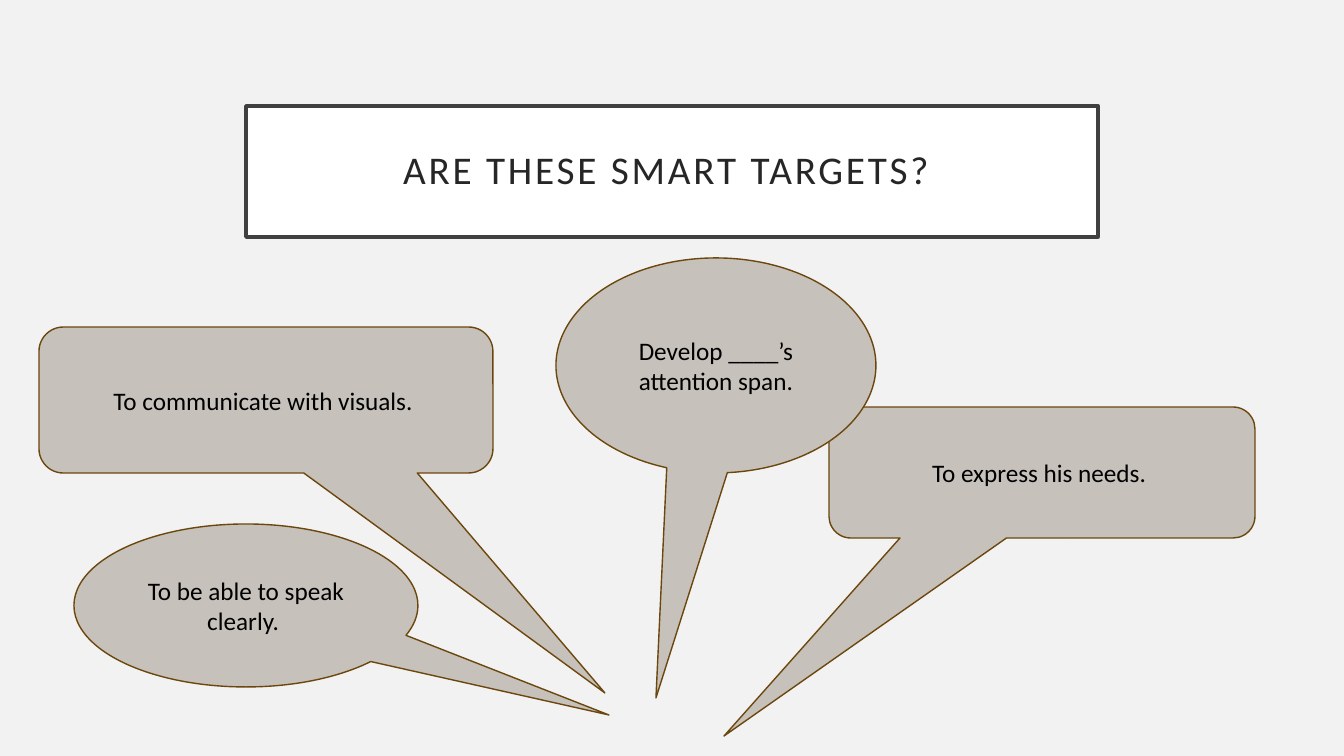
from dataclasses import dataclass

from pptx import Presentation
from pptx import util as u
from pptx.dml.color import RGBColor
from pptx.enum import shapes, text

# Content: lengths in px
SLIDE = (1344, 756)
HEADING = "ARE THESE SMART TARGETS? "
HEADING_BOX = (246, 106, 852, 131)
HEADING_INSET = 20

ROUNDED = shapes.MSO_SHAPE.ROUNDED_RECTANGULAR_CALLOUT
OVAL = shapes.MSO_SHAPE.OVAL_CALLOUT
# (wording, outline, (left, top, width, height), tip of the tail), back to front
TARGETS = [
    ("To communicate with visuals. ", ROUNDED, (39, 327, 454, 146), (605, 693)),
    ("To express his needs. ", ROUNDED, (829, 407, 426, 131), (724, 736)),
    ("Develop ____’s attention span.", OVAL, (556, 258, 320, 215), (656, 698)),
    ("To be able to speak clearly. ", OVAL, (74, 524, 344, 163), (609, 715)),
]


@dataclass(frozen=True)
class Theme:
    font: str = "Calibri"
    backdrop: str = "F2F2F2"
    heading_fill: str = "FFFFFF"
    heading_line: str = "404040"
    heading_text: str = "262626"
    bubble_fill: str = "C6C1BA"
    bubble_line: str = "6C470D"
    bubble_text: str = "000000"
    heading_size: int = 28
    bubble_size: int = 18


THEME = Theme()
PX = u.Inches(1) / 100.8


def px(*lengths):
    return [round(length * PX) for length in lengths]


def paint(part, fill, line, weight):
    part.fill.solid()
    part.fill.fore_color.rgb = RGBColor.from_string(fill)
    part.line.color.rgb = RGBColor.from_string(line)
    part.line.width = u.Pt(weight)


def write(part, wording, size, color):
    frame = part.text_frame
    frame.text = wording
    frame.word_wrap = True
    frame.auto_size = text.MSO_AUTO_SIZE.NONE
    frame.vertical_anchor = text.MSO_ANCHOR.MIDDLE
    paragraph = frame.paragraphs[0]
    paragraph.alignment = text.PP_ALIGN.CENTER
    paragraph.font.name = THEME.font
    paragraph.font.size = u.Pt(size)
    paragraph.font.color.rgb = RGBColor.from_string(color)
    return frame


def add_heading(slide):
    heading = slide.shapes.title
    heading.left, heading.top, heading.width, heading.height = px(*HEADING_BOX)
    paint(heading, THEME.heading_fill, THEME.heading_line, 2.5)
    frame = write(heading, HEADING, THEME.heading_size, THEME.heading_text)
    inset, = px(HEADING_INSET)
    frame.margin_left = frame.margin_right = inset
    frame.margin_top = frame.margin_bottom = inset
    paragraph = frame.paragraphs[0]
    paragraph.line_spacing = 0.9
    # Letter spacing, in hundredths of a point
    paragraph.runs[0].font._element.set("spc", "200")


def add_target(slide, wording, outline, box, tip):
    left, top, width, height = box
    bubble = slide.shapes.add_shape(outline, *px(*box))
    bubble.shadow.inherit = False
    # The tail is measured from the centre, as a share of the bubble's size
    bubble.adjustments[0] = (tip[0] - left) / width - 0.5
    bubble.adjustments[1] = (tip[1] - top) / height - 0.5
    paint(bubble, THEME.bubble_fill, THEME.bubble_line, 1)
    write(bubble, wording, THEME.bubble_size, THEME.bubble_text)


def main():
    deck = Presentation()
    deck.slide_width, deck.slide_height = px(*SLIDE)
    slide = deck.slides.add_slide(deck.slide_layouts.get_by_name("Title Only"))
    slide.background.fill.solid()
    slide.background.fill.fore_color.rgb = RGBColor.from_string(THEME.backdrop)
    add_heading(slide)
    for target in TARGETS:
        add_target(slide, *target)
    deck.save("out.pptx")


if __name__ == "__main__":
    main()
